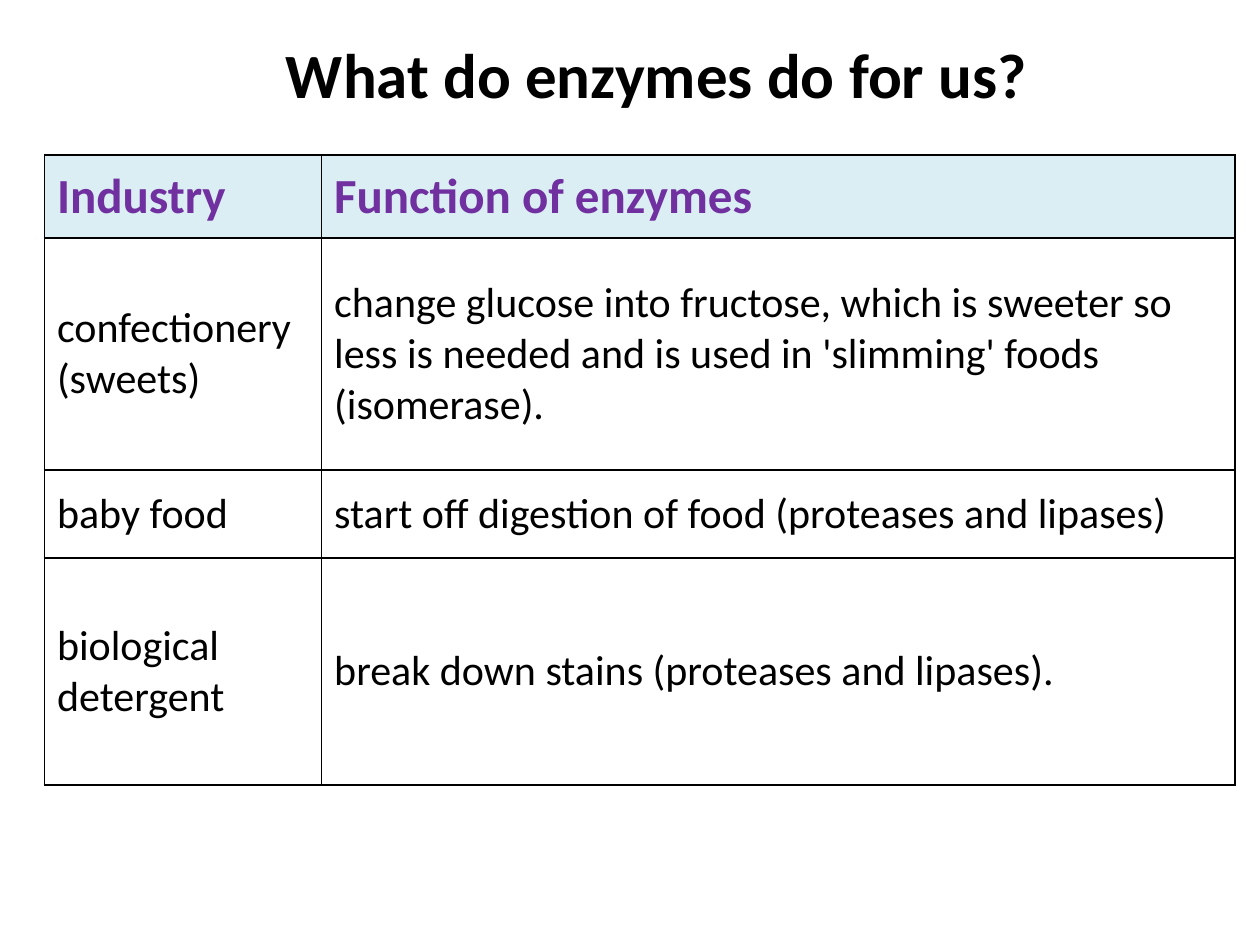
from lxml import etree
from pptx import Presentation
from pptx.dml.color import RGBColor
from pptx.enum.text import MSO_ANCHOR, PP_ALIGN
from pptx.oxml.ns import qn
from pptx.util import Pt

MIDDLE = MSO_ANCHOR.MIDDLE
LEFT = PP_ALIGN.LEFT
TITLE_ONLY = 5
FONT = "Calibri"
BLACK, PURPLE, PALE_BLUE = "000000", "7030A0", "DBEEF4"

COLUMN_WIDTHS = [158.4, 522]
ROW_HEIGHTS = [47.5, 132.5, 50.4, 129.6]
ENZYME_USES = [
    ("Industry", "Function of enzymes"),
    ("confectionery (sweets)",
     "change glucose into fructose, which is sweeter so less is needed "
     "and is used in 'slimming' foods (isomerase)."),
    ("baby food", "start off digestion of food (proteases and lipases)"),
    ("biological detergent", "break down stains (proteases and lipases)."),
]


def rgb(color):
    return RGBColor.from_string(color)


def style_paragraph(paragraph, size, color, bold):
    paragraph.alignment = LEFT
    font = paragraph.font
    font.name, font.size, font.bold = FONT, Pt(size), bold
    font.color.rgb = rgb(color)


def add_borders(cell, color, width):
    properties = cell._tc.get_or_add_tcPr()
    # Border lines come before the fill in the cell properties
    for position, side in enumerate(("a:lnL", "a:lnR", "a:lnT", "a:lnB")):
        line = etree.Element(qn(side), w=str(Pt(width)))
        fill = etree.SubElement(line, qn("a:solidFill"))
        etree.SubElement(fill, qn("a:srgbClr"), val=color)
        properties.insert(position, line)


def add_title(slide, left, top, width, height):
    title = slide.shapes.title
    title.left, title.top = Pt(left), Pt(top)
    title.width, title.height = Pt(width), Pt(height)
    frame = title.text_frame
    frame.text = "What do enzymes do for us?"
    frame.word_wrap = False
    frame.vertical_anchor = MIDDLE
    style_paragraph(frame.paragraphs[0], 36, BLACK, True)


def add_enzyme_table(slide, left, top, width, height):
    table = slide.shapes.add_table(
        len(ROW_HEIGHTS), len(COLUMN_WIDTHS),
        Pt(left), Pt(top), Pt(width), Pt(height)).table
    table.horz_banding = False
    for column, column_width in zip(table.columns, COLUMN_WIDTHS):
        column.width = Pt(column_width)

    for row_index, texts in enumerate(ENZYME_USES):
        table.rows[row_index].height = Pt(ROW_HEIGHTS[row_index])
        is_header = row_index == 0
        for column_index, text in enumerate(texts):
            cell = table.cell(row_index, column_index)
            cell.text = text
            cell.vertical_anchor = MIDDLE
            paragraph = cell.text_frame.paragraphs[0]
            if is_header:
                cell.fill.solid()
                cell.fill.fore_color.rgb = rgb(PALE_BLUE)
                style_paragraph(paragraph, 28, PURPLE, True)
            else:
                cell.fill.background()
                style_paragraph(paragraph, 24, BLACK, False)
                if column_index == 1:
                    paragraph.space_after = Pt(12)
            add_borders(cell, BLACK, 1)


def main():
    presentation = Presentation()
    presentation.slide_width, presentation.slide_height = Pt(720), Pt(540)
    slide = presentation.slides.add_slide(
        presentation.slide_layouts[TITLE_ONLY])
    add_enzyme_table(slide, 25.4, 88.6, sum(COLUMN_WIDTHS), sum(ROW_HEIGHTS))
    add_title(slide, 156.2, 16.6, 442, 51)
    presentation.save("out.pptx")


if __name__ == "__main__":
    main()
